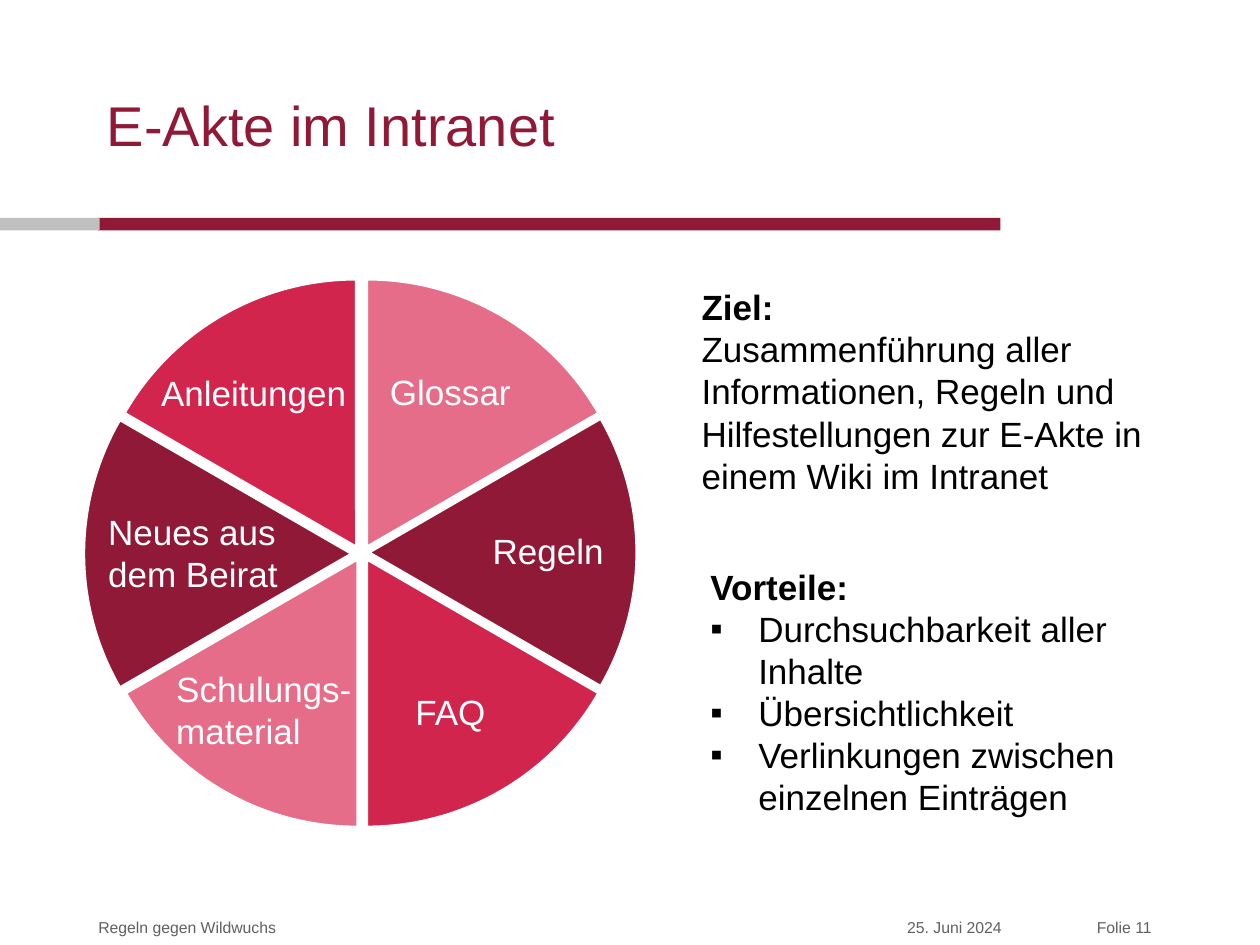
from lxml.etree import SubElement
from pptx import Presentation
from pptx.dml.color import RGBColor
from pptx.enum.shapes import MSO_SHAPE
from pptx.enum.text import MSO_ANCHOR, PP_ALIGN
from pptx.oxml.ns import qn
from pptx.util import Inches, Pt

THEME = {
    "font": "Arial",
    "wine": "8F1936", "red": "D1254E", "rose": "E56D8A",
    "silver": "C0C0C0", "gray": "606060", "black": "000000", "white": "FFFFFF",
    "title": 32, "body": 20, "small": 9,
}

TITLE = "E-Akte im Intranet"
BARS = [((0.78, 1.73, 7.16, 0.1), "wine"), ((0, 1.73, 0.79, 0.1), "silver")]
FOOTER = [
    ("25. Juni 2024", (6.57, 7.22, 1.38, 0.28), PP_ALIGN.RIGHT),
    ("Folie 11", (7.94, 7.22, 1.2, 0.28), PP_ALIGN.RIGHT),
    ("Regeln gegen Wildwuchs", (0.78, 7.22, 5.51, 0.28), PP_ALIGN.LEFT),
]
GOAL = [
    "Ziel:",
    "Zusammenführung aller Informationen, Regeln und "
    "Hilfestellungen zur E-Akte in einem Wiki im Intranet",
]
GAINS = [
    "Vorteile:",
    "Durchsuchbarkeit aller Inhalte",
    "Übersichtlichkeit",
    "Verlinkungen zwischen einzelnen Einträgen",
]
# Clockwise from the top: left, top, colour
WEDGES = [
    (0.8, 2.22, "rose"), (0.82, 2.27, "wine"), (0.8, 2.33, "red"),
    (0.72, 2.33, "rose"), (0.67, 2.28, "wine"), (0.71, 2.22, "red"),
]
INNER = [
    ("Glossar", (2.96, 2.67, 1.23, 0.91)),
    ("Regeln", (3.71, 3.96, 1.28, 0.86)),
    ("FAQ", (2.96, 5.21, 1.23, 0.91)),
]
OUTER = [
    (["Anleitungen"], (1.18, 2.9, 1.73, 0.44)),
    (["Neues aus dem Beirat"], (0.76, 4, 1.73, 0.77)),
    (["Schulungs-", "material"], (1.3, 5.25, 1.73, 0.77)),
]
DIAM = 4.23
START = 270  # degrees, twelve o'clock
INDENT = 0.38


def color(name):
    return RGBColor.from_string(THEME[name])


def add_form(slide, kind, box, fill):
    form = slide.shapes.add_shape(kind, *map(Inches, box))
    form.shadow.inherit = False
    form.fill.solid()
    form.fill.fore_color.rgb = color(fill)
    form.line.fill.background()
    return form


def add_text(slide, lines, box, size, tint, align=PP_ALIGN.LEFT,
             anchor=MSO_ANCHOR.TOP, inset=None):
    frame = slide.shapes.add_textbox(*map(Inches, box)).text_frame
    frame.word_wrap = True
    frame.vertical_anchor = anchor
    if inset is not None:
        frame.margin_left = frame.margin_right = Inches(inset)
        frame.margin_top = frame.margin_bottom = Inches(inset)
    frame.text = "\n".join(lines)
    for para in frame.paragraphs:
        para.alignment = align
        for run in para.runs:
            run.font.name = THEME["font"]
            run.font.size = Pt(THEME[size])
            run.font.color.rgb = color(tint)
    return frame


def add_bullet(para):
    props = para._p.get_or_add_pPr()
    props.set("marL", str(Inches(INDENT)))
    props.set("indent", str(-Inches(INDENT)))
    SubElement(props, qn("a:buFont"), typeface=THEME["font"])
    SubElement(props, qn("a:buChar"), char="▪")


def add_wheel(slide):
    step = 360 / len(WEDGES)
    for i, (left, top, fill) in enumerate(WEDGES):
        wedge = add_form(slide, MSO_SHAPE.PIE, (left, top, DIAM, DIAM), fill)
        wedge.line.color.rgb = color("white")
        wedge.line.width = Pt(1)
        for k in range(2):
            angle = (START + (i + k) * step) % 360
            wedge.adjustments[k] = angle * 0.6  # 60000 units per degree
    for label, box in INNER:
        frame = add_text(slide, [label], box, "body", "white",
                         PP_ALIGN.CENTER, MSO_ANCHOR.MIDDLE, 0.03)
        frame.paragraphs[0].line_spacing = 0.9
    for lines, box in OUTER:
        add_text(slide, lines, box, "body", "white")


def main():
    deck = Presentation()
    deck.slide_width, deck.slide_height = Inches(10), Inches(7.5)
    slide = deck.slides.add_slide(deck.slide_layouts[6])

    for box, fill in BARS:
        add_form(slide, MSO_SHAPE.RECTANGLE, box, fill)
    for label, box, align in FOOTER:
        add_text(slide, [label], box, "small", "gray", align,
                 MSO_ANCHOR.MIDDLE, 0)
    add_text(slide, [TITLE], (0.75, 0.48, 6.38, 1.01), "title", "wine",
             anchor=MSO_ANCHOR.MIDDLE)

    goal = add_text(slide, GOAL, (5.47, 2.22, 3.86, 1.78), "body", "black")
    gains = add_text(slide, GAINS, (5.54, 4.44, 3.86, 2.12), "body", "black")
    for frame in (goal, gains):
        frame.paragraphs[0].runs[0].font.bold = True
    for para in gains.paragraphs[1:]:
        add_bullet(para)

    add_wheel(slide)
    deck.save("out.pptx")


if __name__ == "__main__":
    main()
